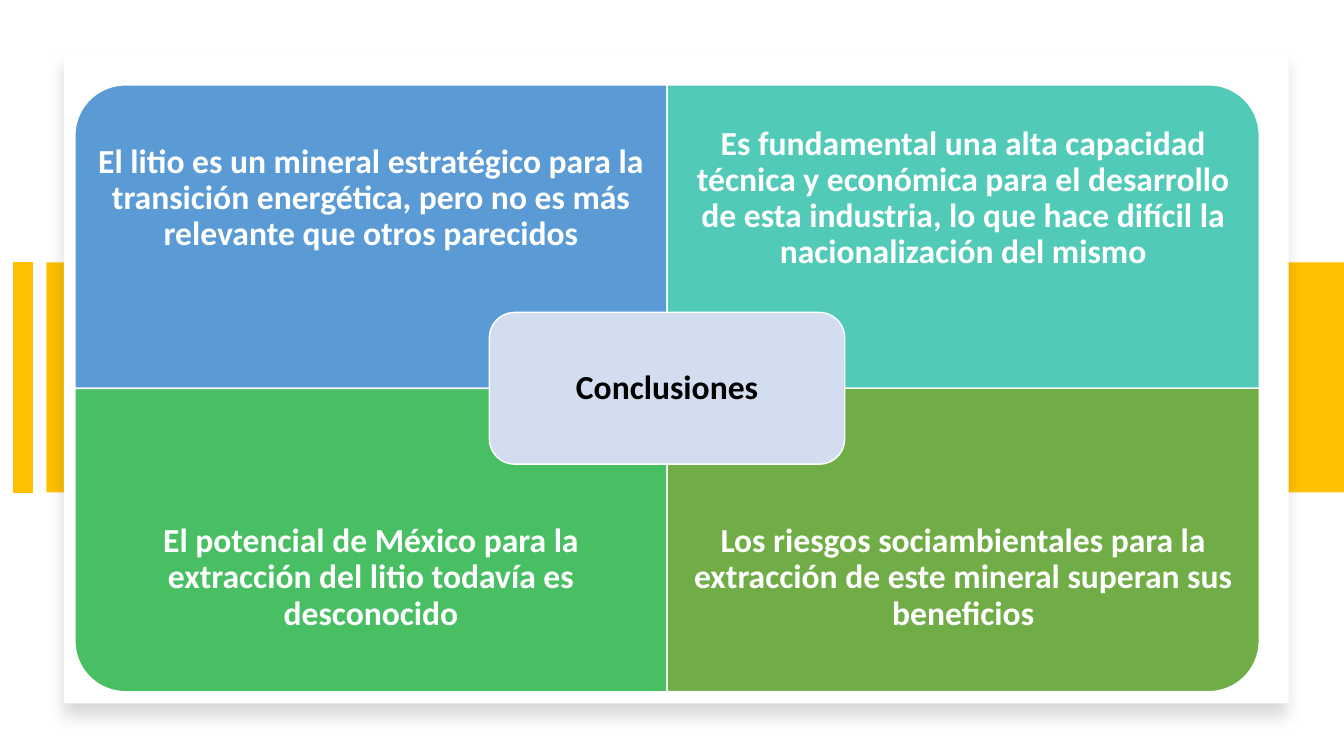
import pptx
import pptx.dml.color
import pptx.enum.shapes
import pptx.enum.text
import pptx.oxml
import pptx.util

Pt = pptx.util.Pt
Kind = pptx.enum.shapes.MSO_SHAPE
NS = 'xmlns:a="http://schemas.openxmlformats.org/drawingml/2006/main"'
SHADE = (f'<a:effectLst {NS}><a:outerShdw blurRad="{Pt(11)}" dist="{Pt(10)}" '
         'dir="5400000" algn="t" rotWithShape="0"><a:srgbClr val="000000">'
         '<a:alpha val="15000"/></a:srgbClr></a:outerShdw></a:effectLst>')


def color(code):
    return pptx.dml.color.RGBColor.from_string(code)


def write(box, text, size=24, ink="FFFFFF", inset=13.6):
    frame = box.text_frame
    frame.word_wrap = True
    frame.auto_size = pptx.enum.text.MSO_AUTO_SIZE.NONE
    frame.vertical_anchor = pptx.enum.text.MSO_ANCHOR.MIDDLE
    frame.margin_left = frame.margin_right = Pt(inset)
    frame.margin_top = frame.margin_bottom = Pt(inset)
    para = frame.paragraphs[0]
    para.alignment = pptx.enum.text.PP_ALIGN.CENTER
    para.line_spacing = 0.9
    run = para.add_run()
    run.text = text
    run.font.name = "Calibri"
    run.font.size = Pt(size)
    run.font.bold = True
    run.font.color.rgb = color(ink)


class Page:
    gold = "FFC000"
    white = "FFFFFF"

    def __init__(self, slide):
        self.slide = slide

    def shape(self, kind, x, y, w, h, fill, edge=None, turn=0):
        """Add a shape that covers the given box after its turn."""
        if turn % 180:
            x, y, w, h = x + (w - h) / 2, y + (h - w) / 2, h, w
        item = self.slide.shapes.add_shape(kind, Pt(x), Pt(y), Pt(w), Pt(h))
        item.rotation = turn
        item.shadow.inherit = False
        item.fill.solid()
        item.fill.fore_color.rgb = color(fill)
        if edge:
            item.line.color.rgb = color(edge)
            item.line.width = Pt(1)
        else:
            item.line.fill.background()
        return item

    def card(self, x, y, w, h):
        props = self.shape(Kind.RECTANGLE, x, y, w, h, self.white).element.spPr
        props.remove(props.find("{*}effectLst"))
        props.append(pptx.oxml.parse_xml(SHADE))

    def line(self, x, top, end, width):
        item = self.slide.shapes.add_connector(
            pptx.enum.shapes.MSO_CONNECTOR.STRAIGHT, Pt(x), Pt(top), Pt(x), Pt(end))
        item.line.color.rgb = color(self.gold)
        item.line.width = Pt(width)
        item.element.spPr.append(pptx.oxml.parse_xml(f"<a:effectLst {NS}/>"))

    def label(self, text, x, y, w, h):
        write(self.slide.shapes.add_textbox(Pt(x), Pt(y), Pt(w), Pt(h)), text)

    def title(self, text, x, y, w, h):
        """Place the title above all that is drawn so far."""
        item = self.slide.shapes.title
        item.left, item.top, item.width, item.height = Pt(x), Pt(y), Pt(w), Pt(h)
        write(item, text, ink="000000", inset=7.2)
        item.element.getparent().append(item.element)


def main():
    deck = pptx.Presentation()
    deck.slide_width, deck.slide_height = Pt(960), Pt(540)
    page = Page(deck.slides.add_slide(deck.slide_layouts[5]))
    for mark in list(page.slide.placeholders):
        if mark.placeholder_format.idx:
            mark.element.getparent().remove(mark.element)

    page.shape(Kind.RECTANGLE, 33.2, 187.4, 926.8, 164.4, page.gold)
    page.line(16.5, 187.4, 352, 14)
    page.card(45.6, 36.5, 874.8, 466)

    left, top, wide, high = 53.5, 60.6, 423, 216.75
    deep = high * 0.75
    parts = [
        ("El litio es un mineral estratégico para la transición energética, "
         "pero no es más relevante que otros parecidos", "5B9BD5", 270),
        ("Es fundamental una alta capacidad técnica y económica para el desarrollo "
         "de esta industria, lo que hace difícil la nacionalización del mismo",
         "52CAB8", 0),
        ("El potencial de México para la extracción del litio todavía es desconocido",
         "49BF64", 180),
        ("Los riesgos sociambientales para la extracción de este mineral "
         "superan sus beneficios", "70AD47", 90),
    ]
    for i, (text, fill, turn) in enumerate(parts):
        row, col = divmod(i, 2)
        x, y = left + col * wide, top + row * high
        page.shape(Kind.ROUND_1_RECTANGLE, x, y, wide, high, fill, page.white, turn)
        page.label(text, x, y + row * (high - deep), wide, deep)

    w, h, pad = wide * 0.6, high / 2, 5.3
    x, y = left + wide - w / 2, top + high - h / 2
    page.shape(Kind.ROUNDED_RECTANGLE, x, y, w, h, "D2DEEF", page.white)
    page.title("Conclusiones", x + pad, y + pad, w - 2 * pad, h - 2 * pad)
    deck.save("out.pptx")


if __name__ == "__main__":
    main()
